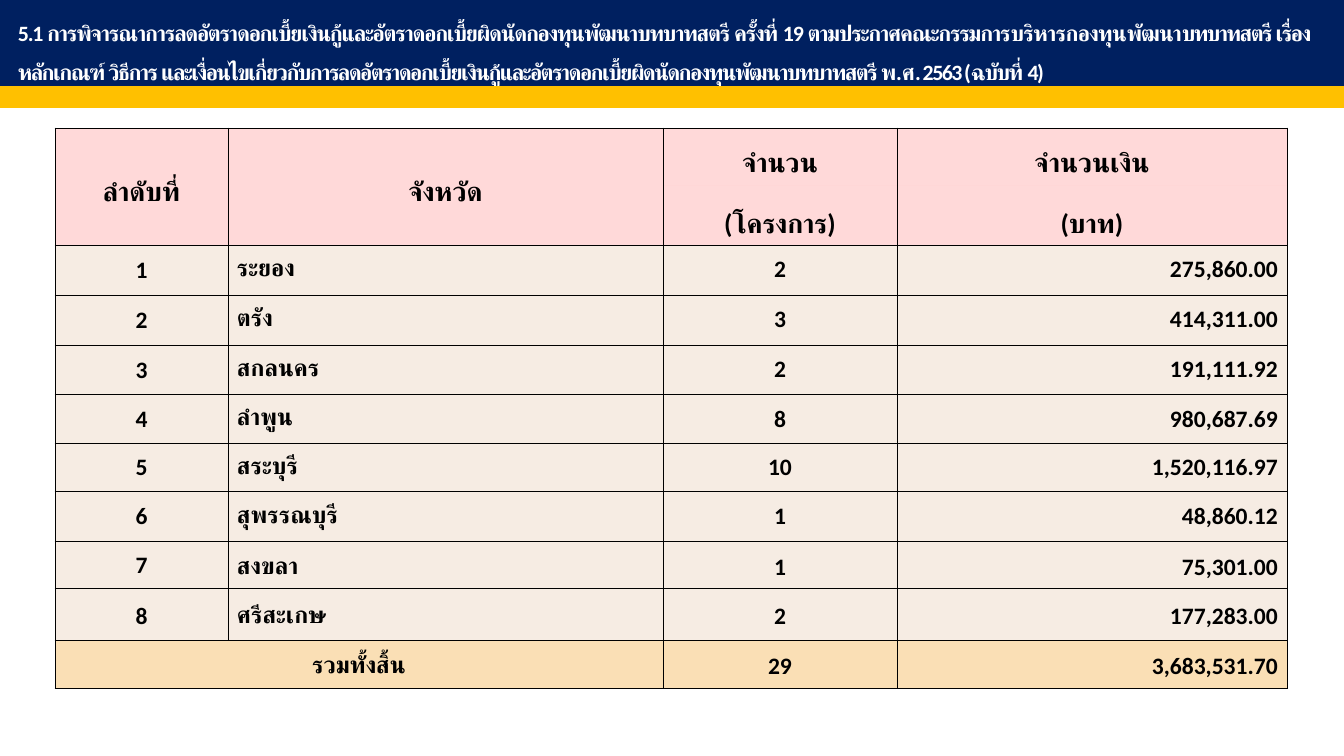
from lxml.etree import SubElement
from pptx import Presentation
from pptx.dml.color import RGBColor
from pptx.enum.shapes import MSO_SHAPE as Shape
from pptx.enum.text import MSO_ANCHOR as Anchor, PP_ALIGN as Align
from pptx.oxml import parse_xml
from pptx.oxml.ns import nsdecls, qn
from pptx.util import Pt

PX = 7557


def paint(color_format, color):
    color_format.rgb = RGBColor.from_string(color)


def add_band(preset, left, top, width, height, color=None):
    band = slide.shapes.add_shape(preset, left * PX, top * PX, width * PX, height * PX)
    band.shadow.inherit = False
    if color:
        band.fill.solid()
        paint(band.fill.fore_color, color)
        paint(band.line.color, color)
        band.line.width = Pt(1)
    else:
        band.fill.background()
        band.line.fill.background()
    return band


prs = Presentation()
prs.slide_width = 1344 * PX
prs.slide_height = 756 * PX
slide = prs.slides.add_slide(prs.slide_layouts[6])

rows = [
    ("ลำดับที่", "จังหวัด", "จำนวน", "จำนวนเงิน"),
    ("", "", "(โครงการ)", "(บาท)"),
    ("1", "ระยอง", "2", "275,860.00"),
    ("2", "ตรัง", "3", "414,311.00"),
    ("3", "สกลนคร", "2", "191,111.92"),
    ("4", "ลำพูน", "8", "980,687.69"),
    ("5", "สระบุรี", "10", "1,520,116.97"),
    ("6", "สุพรรณบุรี", "1", "48,860.12"),
    ("7", "สงขลา", "1", "75,301.00"),
    ("8", "ศรีสะเกษ", "2", "177,283.00"),
    ("รวมทั้งสิ้น", "", "29", "3,683,531.70"),
]
row_heights = [58, 59, 50, 50, 50, 49, 48, 50, 47, 52, 48]
column_widths = [173, 435, 234, 390]
column_aligns = [Align.CENTER, Align.LEFT, Align.CENTER, Align.RIGHT]
total_row = len(rows) - 1

loans = slide.shapes.add_table(
    len(rows), 4, 55 * PX, 128 * PX, sum(column_widths) * PX, sum(row_heights) * PX
).table
loans.first_row = False
loans.horz_banding = False
for column, width in zip(loans.columns, column_widths):
    column.width = width * PX
for row, height in zip(loans.rows, row_heights):
    row.height = height * PX
for c in (0, 1):
    loans.cell(0, c).merge(loans.cell(1, c))
loans.cell(total_row, 0).merge(loans.cell(total_row, 1))

for r, values in enumerate(rows):
    is_header = r < 2
    for c, value in enumerate(values):
        cell = loans.cell(r, c)
        cell.vertical_anchor = Anchor.MIDDLE
        cell.margin_left = cell.margin_right = (1 if is_header else 9) * PX
        cell.margin_top = (1 if is_header else 0) * PX
        cell.margin_bottom = 0

        cell.text_frame.text = value
        entry = cell.text_frame.paragraphs[0]
        entry.alignment = Align.CENTER if is_header else column_aligns[c]
        if is_header:
            entry.line_spacing = 1.5
        elif r >= (9 if c == 0 else 8):
            entry.line_spacing = 1.15
        else:
            entry.line_spacing = 0.95 if c == 0 else 0.92
        entry.font.size = Pt(16 if is_header else 14)
        for run in entry.runs:
            run.font.size = Pt(16 if is_header else 14)
            run.font.name = "Calibri"
            run.font.bold = True
            paint(run.font.color, "000000")

        if is_header:
            color, opacity = "FFC9C9", 70
        else:
            color, opacity = "F9D8A3" if r == total_row else "F4E8DC", 80
        cell.fill.solid()
        paint(cell.fill.fore_color, color)
        properties = cell._tc.tcPr
        tint = properties.find(".//" + qn("a:srgbClr"))
        SubElement(tint, qn("a:alpha"), val=str(opacity * 1000))

        open_side = {0: "B", 1: "T"}.get(r) if c > 1 else None
        for i, side in enumerate("LRTB"):
            stroke = (
                "<a:noFill/>"
                if side == open_side
                else '<a:solidFill><a:srgbClr val="000000"/></a:solidFill>'
            )
            border = f'<a:ln{side} w="6350" {nsdecls("a")}>{stroke}</a:ln{side}>'
            properties.insert(i, parse_xml(border))

add_band(Shape.RECTANGLE, -1, -1, 1344, 91, "002060")
heading = add_band(Shape.ROUNDED_RECTANGLE, 2, 4, 1340, 83).text_frame
heading.word_wrap = True
heading.vertical_anchor = Anchor.MIDDLE
title = heading.paragraphs[0]
title.alignment = Align.LEFT
title.line_spacing = 1.5
title_parts = [
    ("5.1 การพิจารณาการลดอัตราดอกเบี้ยเงินกู้และอัตราดอกเบี้ยผิดนัดกองทุนพัฒนาบทบาทสตรี ครั้งที่ 19 ตามประกาศคณะกรรมการ", -70),
    ("บริหารกองทุน", -40),
    ("พัฒนา", -60),
    ("บทบาทสตรี เรื่อง หลักเกณฑ์ วิธีการ และเงื่อนไขเกี่ยวกับการลดอัตราดอกเบี้ยเงินกู้และอัตราดอกเบี้ยผิดนัดกองทุนพัฒนาบทบาทสตรี พ.ศ. 2563 (ฉบับที่ 4)", -90),
]
for words, spacing in title_parts:
    run = title.add_run()
    run.text = words
    run.font.size = Pt(13)
    run.font.name = "Calibri"
    run.font.bold = True
    paint(run.font.color, "FFFFFF")
    run.font._element.set("spc", str(spacing))
add_band(Shape.RECTANGLE, 0, 87, 1344, 20, "FFC000")

prs.save("out.pptx")
